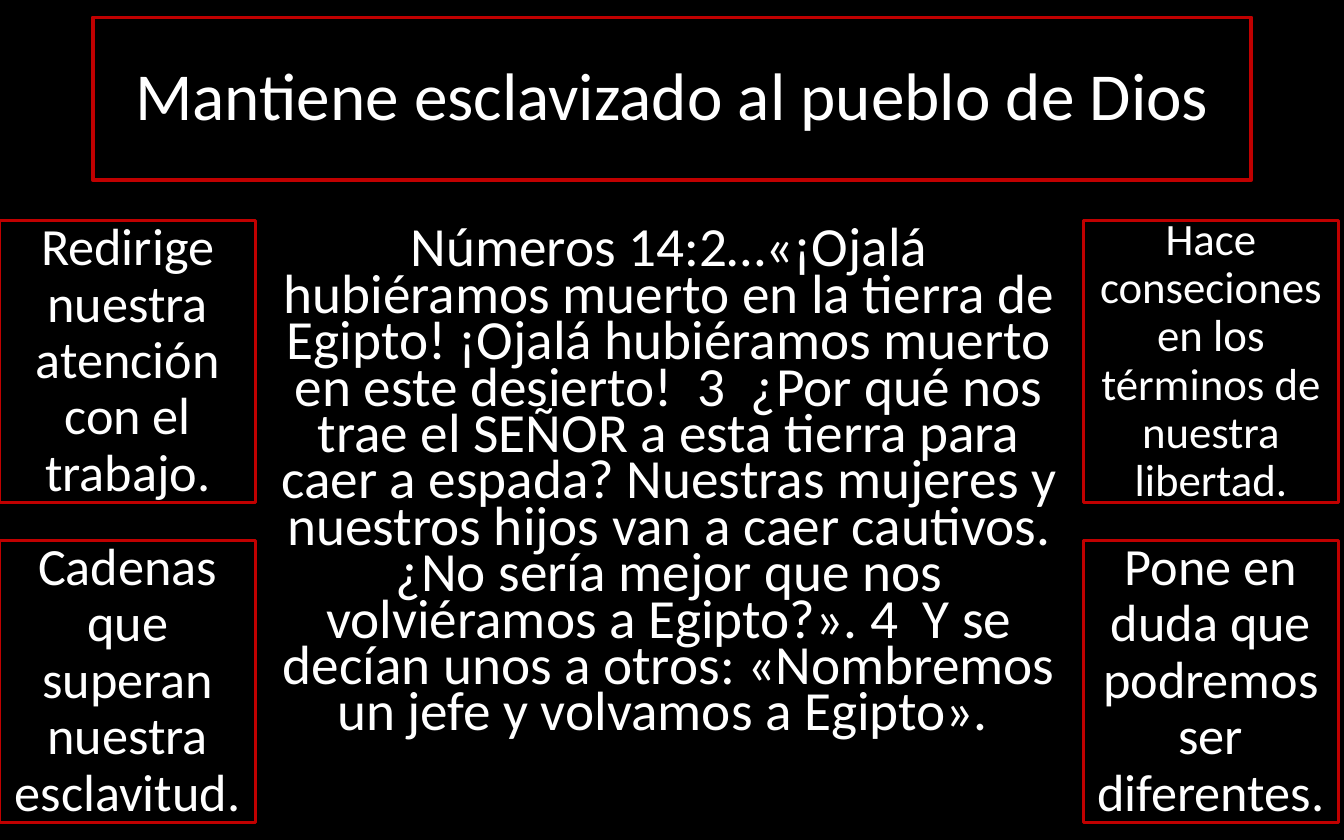
from pptx import Presentation, util as u
from pptx.dml.color import RGBColor
from pptx.enum import shapes, text

THEME = {
    "font": "Calibri",
    "background": RGBColor.from_string("000000"),
    "ink": RGBColor.from_string("FFFFFF"),
    "border": RGBColor.from_string("C00000"),
    "title_size": 36,
    "verse_size": 29.6,
    "tactic_size": 28,
    "long_tactic_size": 24,
}

TITLE = "Mantiene esclavizado al pueblo de Dios"
VERSE = (
    "Números 14:2…«¡Ojalá hubiéramos muerto en la tierra de Egipto! "
    "¡Ojalá hubiéramos muerto en este desierto!  3  ¿Por qué nos trae el SEÑOR "
    "a esta tierra para caer a espada? Nuestras mujeres y nuestros hijos van a "
    "caer cautivos. ¿No sería mejor que nos volviéramos a Egipto?». 4  Y se "
    "decían unos a otros: «Nombremos un jefe y volvamos a Egipto». "
)
# Rows of the side columns: (left text, size), (right text, size)
TACTICS = [
    [("Redirige nuestra atención con el trabajo.", "tactic_size"),
     ("Hace conseciones en los términos de nuestra libertad.", "long_tactic_size")],
    [("Cadenas que superan nuestra esclavitud.", "tactic_size"),
     ("Pone en duda que podremos ser diferentes.", "tactic_size")],
]

WIDTH, HEIGHT = 10, 6.25
BOX_W, BOX_H = 1.9, 2.1
COLUMN_STEP, ROW_STEP = 8.06, 2.38
GRID_TOP = 1.64
GUTTER = 0.04
TITLE_W, TITLE_H, TITLE_TOP = 8.62, 1.21, 0.13


def add_text(slide, words, area, *, size, border=None, line_spacing=0.9,
             space_before=7.5, anchor=text.MSO_ANCHOR.MIDDLE):
    """Add centred text; a border width in points puts it in a rectangle."""
    position = [u.Inches(length) for length in area]
    if border:
        holder = slide.shapes.add_shape(shapes.MSO_SHAPE.RECTANGLE, *position)
        holder.shadow.inherit = False
        holder.fill.background()
        holder.line.color.rgb = THEME["border"]
        holder.line.width = u.Pt(border)
    else:
        holder = slide.shapes.add_textbox(*position)
    frame = holder.text_frame
    frame.word_wrap = True
    frame.vertical_anchor = anchor
    paragraph = frame.paragraphs[0]
    paragraph.alignment = text.PP_ALIGN.CENTER
    paragraph.line_spacing = line_spacing
    paragraph.space_before = u.Pt(space_before)
    run = paragraph.add_run()
    run.text = words
    run.font.name = THEME["font"]
    run.font.size = u.Pt(THEME[size])
    run.font.color.rgb = THEME["ink"]


def main():
    deck = Presentation()
    deck.slide_width, deck.slide_height = u.Inches(WIDTH), u.Inches(HEIGHT)
    slide = deck.slides.add_slide(deck.slide_layouts[6])
    slide.background.fill.solid()
    slide.background.fill.fore_color.rgb = THEME["background"]

    title_area = ((WIDTH - TITLE_W) / 2, TITLE_TOP, TITLE_W, TITLE_H)
    add_text(slide, TITLE, title_area, size="title_size", border=2, space_before=0)

    verse_left = BOX_W + GUTTER
    verse_area = (verse_left, GRID_TOP + 0.02,
                  COLUMN_STEP - GUTTER - verse_left, ROW_STEP + BOX_H - 0.02)
    add_text(slide, VERSE, verse_area, size="verse_size", line_spacing=0.7,
             anchor=text.MSO_ANCHOR.TOP)

    for row, tactics in enumerate(TACTICS):
        for column, (tactic, size) in enumerate(tactics):
            area = (column * COLUMN_STEP, GRID_TOP + row * ROW_STEP, BOX_W, BOX_H)
            add_text(slide, tactic, area, size=size, border=1.5)

    deck.save("out.pptx")


if __name__ == "__main__":
    main()
